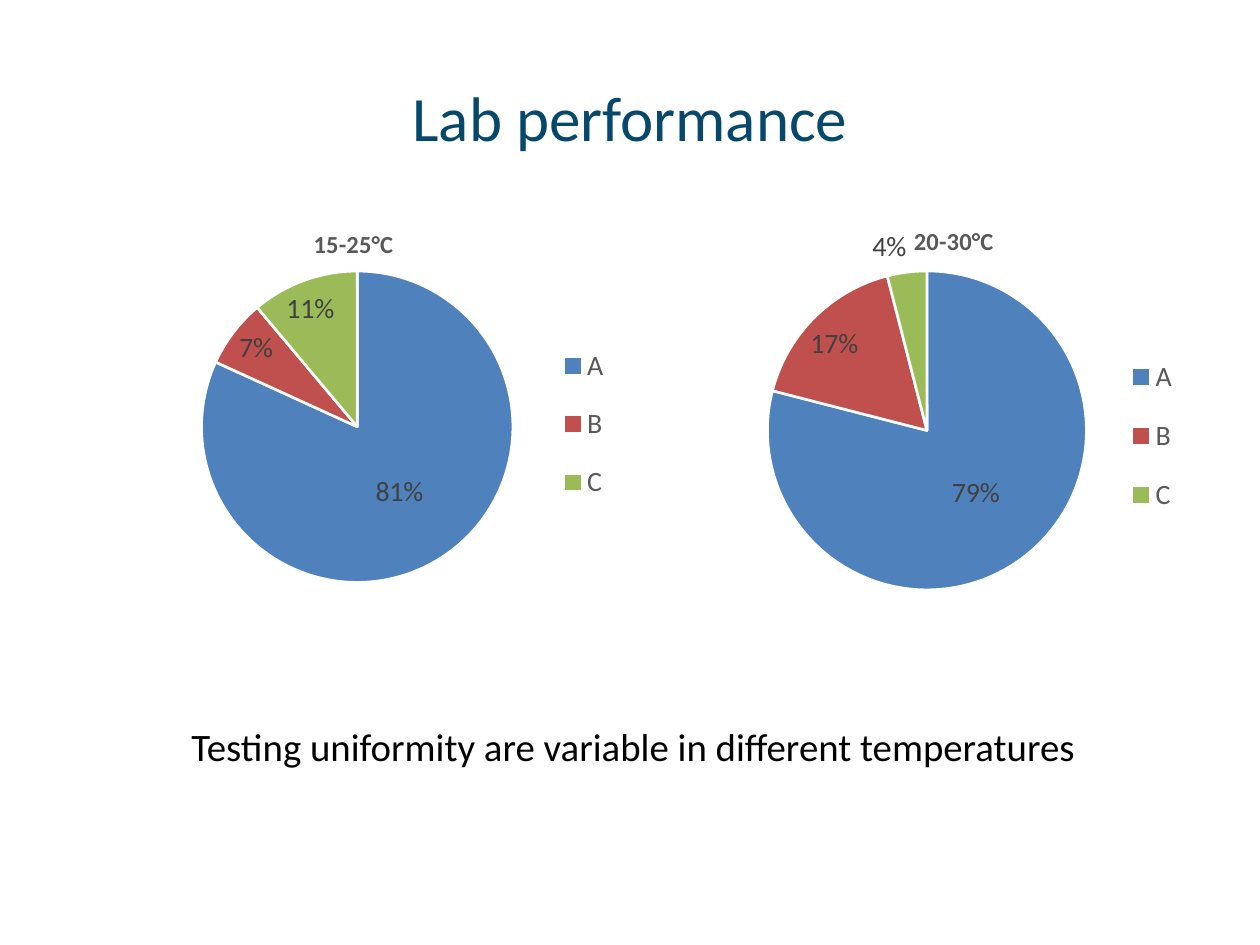
from lxml import etree
from pptx import Presentation
from pptx.chart.data import CategoryChartData
from pptx.dml.color import RGBColor
from pptx.enum.chart import XL_CHART_TYPE, XL_LABEL_POSITION, XL_LEGEND_POSITION
from pptx.enum.text import MSO_ANCHOR, PP_ALIGN
from pptx.oxml.ns import qn
from pptx.util import Cm, Pt

PIE = XL_CHART_TYPE.PIE
BEST_FIT, CENTER = XL_LABEL_POSITION.BEST_FIT, XL_LABEL_POSITION.CENTER
LEGEND_RIGHT = XL_LEGEND_POSITION.RIGHT
MIDDLE, BOTTOM = MSO_ANCHOR.MIDDLE, MSO_ANCHOR.BOTTOM
ALIGN_LEFT, ALIGN_CENTER = PP_ALIGN.LEFT, PP_ALIGN.CENTER

FONT = "Calibri"
COLORS = {
    "title": "05486C", "body": "000000", "chart text": "595959", "label": "404040",
    "A": "4F81BD", "B": "C0504D", "C": "9BBB59", "border": "FFFFFF",
}
CATEGORIES = ["A", "B", "C"]
PIES = [
    {"title": "15-25°C", "values": [0.81, 0.07, 0.11],
     "place": (2.36, 3.45, 11.07, 10.31),
     "title at": (0.35, 0.1),
     "plot at": (0.154, 0.181, 0.567, 0.638),
     "legend at": (0.79, 0.3, 0.12, 0.39)},
    {"title": "20-30°C", "values": [0.79, 0.17, 0.04],
     "place": (13.44, 3.94, 11.38, 9.7),
     "title at": (0.43, 0.05),
     "plot at": (0.168, 0.157, 0.586, 0.663),
     "legend at": (0.8, 0.29, 0.12, 0.42)},
]


def set_font(font, size, color, bold=False):
    font.name, font.size, font.bold = FONT, Pt(size), bold
    font.color.rgb = RGBColor.from_string(COLORS[color])


def add_text(page, text, place, size, color, align, anchor):
    box = page.shapes.add_textbox(*map(Cm, place))
    frame = box.text_frame
    frame.word_wrap = True
    frame.vertical_anchor = anchor
    para = frame.paragraphs[0]
    para.alignment = align
    span = para.add_run()
    span.text = text
    set_font(span.font, size, color)


def set_layout(parent, position, fractions, inner=False):
    for old in parent.findall(qn("c:layout")):
        parent.remove(old)
    layout = etree.Element(qn("c:layout"))
    manual = etree.SubElement(layout, qn("c:manualLayout"))
    settings = [("layoutTarget", "inner")] if inner else []
    settings += [("xMode", "edge"), ("yMode", "edge")]
    settings += zip("xywh", map(str, fractions))
    for name, value in settings:
        etree.SubElement(manual, qn("c:" + name)).set("val", value)
    parent.insert(position, layout)


def add_pie(page, pie):
    data = CategoryChartData(number_format="0%")
    data.categories = CATEGORIES
    data.add_series(pie["title"], pie["values"])
    chart = page.shapes.add_chart(PIE, *map(Cm, pie["place"]), data).chart
    set_font(chart.font, 10, "body")

    chart.has_title = True
    title = chart.chart_title
    title.include_in_layout = False
    span = title.text_frame.paragraphs[0].add_run()
    span.text = pie["title"]
    set_font(span.font, 14, "chart text", bold=True)

    chart.has_legend = True
    chart.legend.position = LEGEND_RIGHT
    chart.legend.include_in_layout = False
    set_font(chart.legend.font, 16, "chart text")

    plot = chart.plots[0]
    plot.vary_by_categories = True
    series = plot.series[0]
    labels = series.data_labels
    labels.show_value = True
    labels.show_percentage = False
    labels.number_format = "0%"
    labels.number_format_is_linked = False
    labels.position = BEST_FIT
    set_font(labels.font, 16, "label")
    for index, category in enumerate(CATEGORIES):
        look = series.points[index].format
        look.fill.solid()
        look.fill.fore_color.rgb = RGBColor.from_string(COLORS[category])
        look.line.color.rgb = RGBColor.from_string(COLORS["border"])
        look.line.width = Pt(1.5)
    largest = series.points[0].data_label
    set_font(largest.font, 16, "label")
    largest.position = CENTER

    root = chart.element.find(qn("c:chart"))
    set_layout(root.find(qn("c:title")), 1, pie["title at"])
    set_layout(root.find(qn("c:plotArea")), 0, pie["plot at"], inner=True)
    set_layout(root.find(qn("c:legend")), 1, pie["legend at"])


def main():
    deck = Presentation()
    deck.slide_width, deck.slide_height = Cm(25.4), Cm(19.05)
    page = deck.slides.add_slide(deck.slide_layouts[6])
    add_text(page, "Lab performance", (1.27, 0.76, 22.86, 3.18),
             size=36, color="title", align=ALIGN_CENTER, anchor=MIDDLE)
    add_text(page, "Testing uniformity are variable in different temperatures",
             (3.61, 14.17, 19.69, 1.47),
             size=22.2, color="body", align=ALIGN_LEFT, anchor=BOTTOM)
    for pie in PIES:
        add_pie(page, pie)
    deck.save("out.pptx")


if __name__ == "__main__":
    main()
